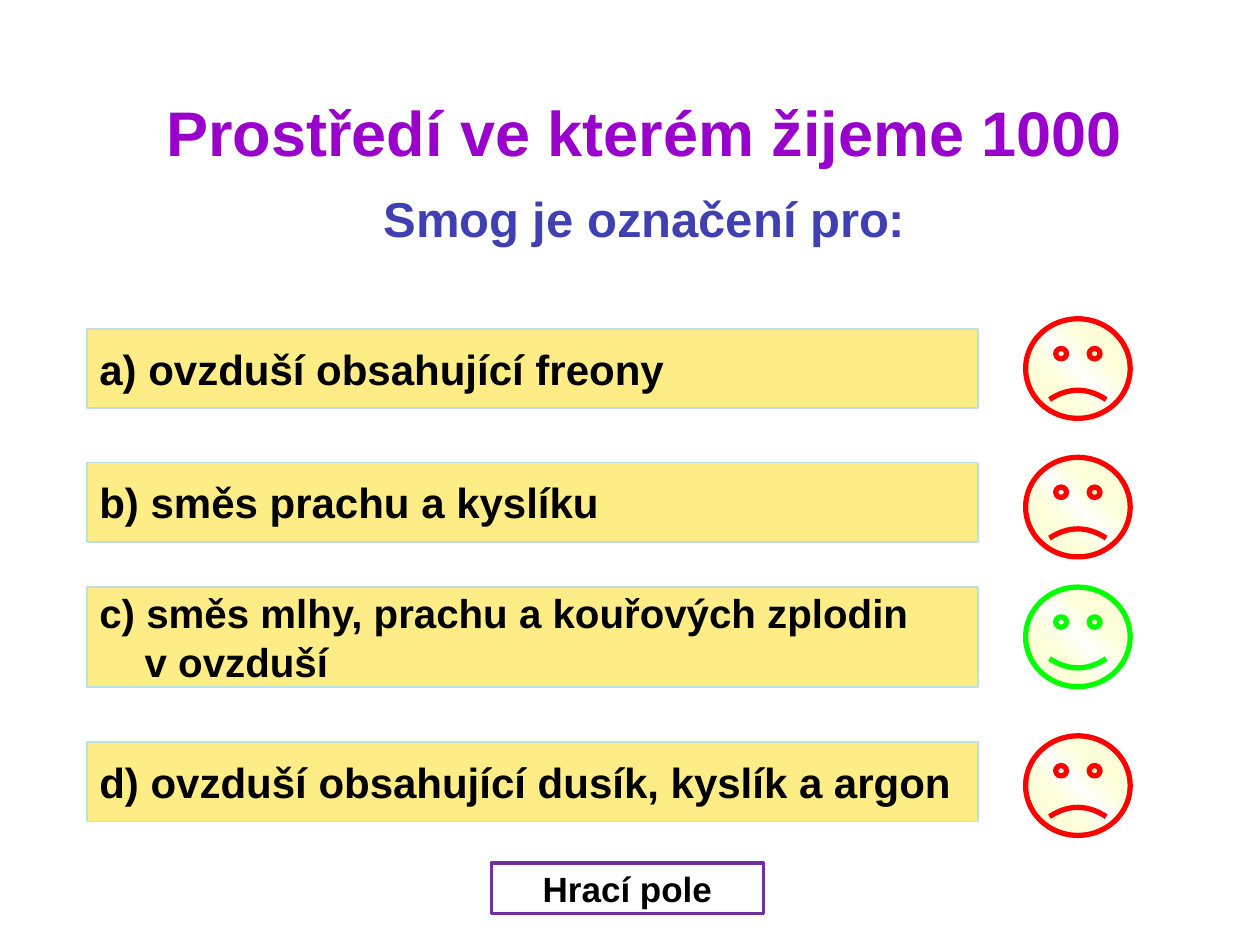
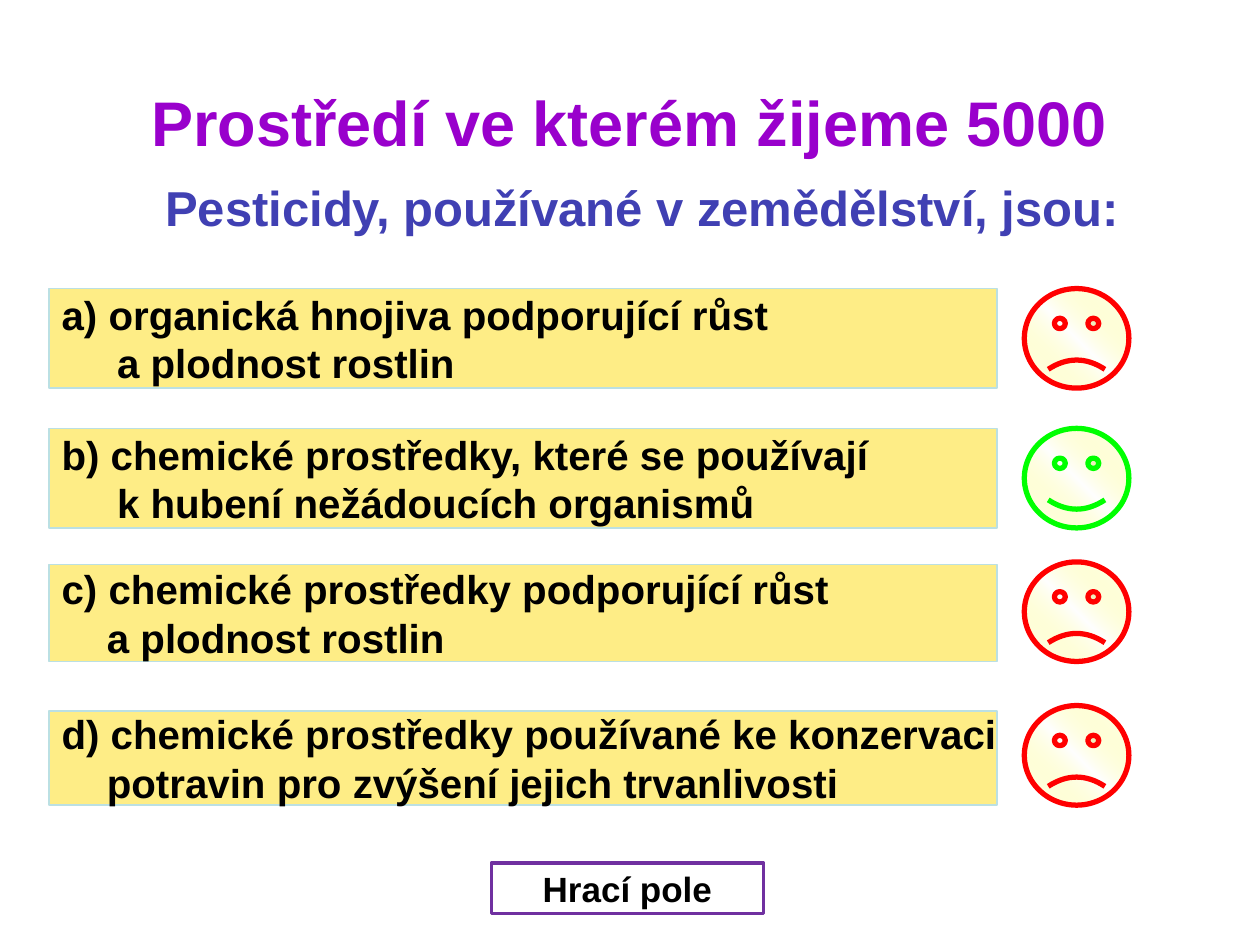
from lxml import etree
from pptx import Presentation
from pptx.dml.color import RGBColor
from pptx.enum.shapes import MSO_SHAPE
from pptx.enum.text import MSO_ANCHOR, PP_ALIGN
from pptx.oxml import parse_xml
from pptx.util import Inches, Pt

BUTTON, SMILEY = MSO_SHAPE.ACTION_BUTTON_CUSTOM, MSO_SHAPE.SMILEY_FACE
TOP, MIDDLE = MSO_ANCHOR.TOP, MSO_ANCHOR.MIDDLE
LEFT, CENTER = PP_ALIGN.LEFT, PP_ALIGN.CENTER

PURPLE, INDIGO, BLACK, WHITE = "9900CC", "4040B3", "000000", "FFFFFF"
YELLOW, PALE_BLUE, VIOLET = "FEED86", "BBE0E3", "7030A0"
RIGHT_COLOR, WRONG_COLOR = "00FF00", "FF0000"

FACE_FILL = """<a:gradFill xmlns:a="http://schemas.openxmlformats.org/drawingml/2006/main" rotWithShape="1">
<a:gsLst><a:gs pos="0"><a:srgbClr val="FFFFFF"/></a:gs>
<a:gs pos="50000"><a:srgbClr val="FFFF66"><a:alpha val="0"/></a:srgbClr></a:gs>
<a:gs pos="100000"><a:srgbClr val="FFFFFF"/></a:gs></a:gsLst>
<a:lin ang="18900000" scaled="1"/></a:gradFill>"""

QUESTIONS = [
    {"title": "Prostředí ve kterém žijeme 1000", "question": "Smog je označení pro:",
     "title_at": (0.51, 0.69), "question_at": (0.51, 1.45),
     "left": 0.69, "width": 7.07, "face_left": 8.14, "correct": 2,
     "answers": [(2.61, 0.63, 2.53, 24, 0, ["a) ovzduší obsahující freony"]),
                 (3.67, 0.63, 3.63, 24, 0, ["b) směs prachu a kyslíku"]),
                 (4.66, 0.79, 4.66, 23, 0.36, ["c) směs mlhy, prachu a kouřových zplodin", "v ovzduší"]),
                 (5.89, 0.63, 5.84, 24, 0, ["d) ovzduší obsahující dusík, kyslík a argon"])]},
    {"title": "Prostředí ve kterém žijeme 5000", "question": "Pesticidy, používané v zemědělství, jsou:",
     "title_at": (0.39, 0.61), "question_at": (0.49, 1.36),
     "left": 0.39, "width": 7.52, "face_left": 8.13, "correct": 1,
     "answers": [(2.29, 0.79, 2.29, 23, 0.44, ["a) organická hnojiva podporující růst", "a plodnost rostlin"]),
                 (3.4, 0.79, 3.4, 23, 0.44, ["b) chemické prostředky, které se používají", "k hubení nežádoucích organismů"]),
                 (4.48, 0.77, 4.46, 23, 0.36, ["c) chemické prostředky podporující růst", "a plodnost rostlin"]),
                 (5.64, 0.75, 5.6, 23, 0.36, ["d) chemické prostředky používané ke konzervaci", "potravin pro zvýšení jejich trvanlivosti"])]},
]


def write(sp, lines, size, color, align, anchor, wrap, indent=0):
    tf = sp.text_frame
    for name, value in {"word_wrap": wrap, "vertical_anchor": anchor}.items():
        setattr(tf, name, value)
    for i, line in enumerate(lines):
        p = tf.add_paragraph() if i else tf.paragraphs[0]
        p.alignment = align
        if i and indent:
            p._p.get_or_add_pPr().set("marL", str(Inches(indent)))
        r = p.add_run()
        r.text = line
        for name, value in {"name": "Arial", "size": Pt(size), "bold": True}.items():
            setattr(r.font, name, value)
        r.font.color.rgb = RGBColor.from_string(color)


def add_shape(s, kind, box, line, line_width, fill=None):
    sp = s.shapes.add_shape(kind, *map(Inches, box))
    sp.shadow.inherit = False
    sp.line.color.rgb = RGBColor.from_string(line)
    sp.line.width = Pt(line_width)
    if fill:
        sp.fill.solid()
        sp.fill.fore_color.rgb = RGBColor.from_string(fill)
    return sp


prs = Presentation()
prs.slide_width, prs.slide_height = Inches(10), Inches(7.5)

for q in QUESTIONS:
    s = prs.slides.add_slide(prs.slide_layouts[5])
    title = s.shapes.title
    box = map(Inches, (*q["title_at"], 9.21, 0.7))
    for name, value in zip(("left", "top", "width", "height"), box):
        setattr(title, name, value)
    write(title, [q["title"]], 36, PURPLE, CENTER, TOP, True)

    sp = s.shapes.add_textbox(*map(Inches, (*q["question_at"], 9.21, 0.5)))
    write(sp, [q["question"]], 28, INDIGO, CENTER, TOP, True)

    for i, (top, height, face_top, size, indent, lines) in enumerate(q["answers"]):
        sp = add_shape(s, BUTTON, (q["left"], top, q["width"], height), PALE_BLUE, 1, YELLOW)
        write(sp, lines, size, BLACK, LEFT, MIDDLE, False, indent)

        correct = i == q["correct"]
        face = add_shape(s, SMILEY, (q["face_left"], face_top, 0.83, 0.79),
                         RIGHT_COLOR if correct else WRONG_COLOR, 3)
        face.adjustments[0] = 0.047 if correct else -0.047
        face._element.spPr.find("{*}prstGeom").addnext(parse_xml(FACE_FILL))

    sp = add_shape(s, BUTTON, (3.9, 6.85, 2.16, 0.4), VIOLET, 2, WHITE)
    write(sp, ["Hrací pole"], 20, BLACK, CENTER, MIDDLE, False)

prs.save("out.pptx")
